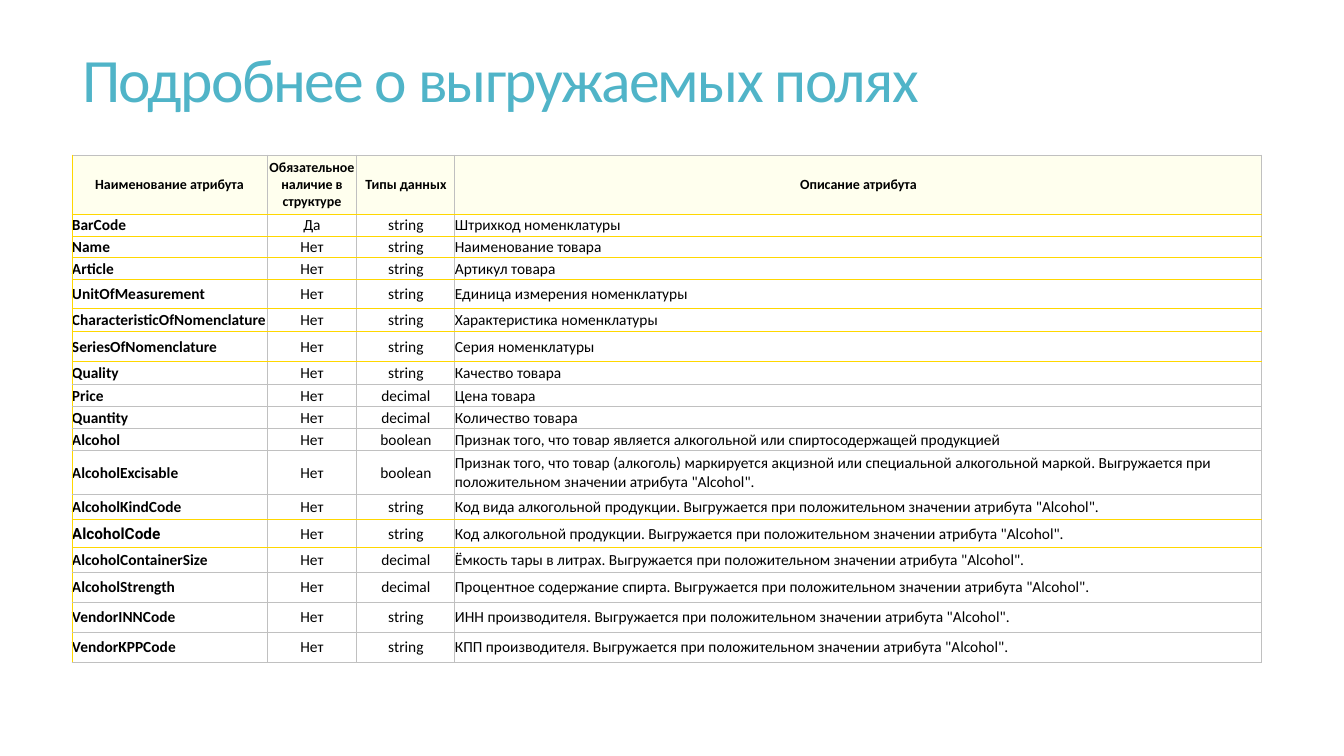
from lxml.etree import SubElement
from pptx import Presentation
from pptx.dml.color import RGBColor
from pptx.enum.text import MSO_ANCHOR, MSO_AUTO_SIZE, PP_ALIGN
from pptx.oxml.ns import qn
from pptx.util import Pt

SCALE = 914400 / 100.8  # EMU in one px
GOLD, GREY = "FFD700", "C0C0C0"


def px(n):
    return round(n * SCALE)


def paint(target, tint):
    if hasattr(target, "solid"):
        target.solid()
        target = target.fore_color
    target.rgb = RGBColor.from_string(tint)


deck = Presentation()
deck.slide_width, deck.slide_height = px(1344), px(756)
slide = deck.slides.add_slide(deck.slide_layouts[5])

# Title
title = slide.shapes.title
place = {"left": px(72), "top": px(21), "width": px(1190), "height": px(125)}
for key, value in place.items():
    setattr(title, key, value)
frame = title.text_frame
look = {"auto_size": MSO_AUTO_SIZE.NONE, "word_wrap": True,
        "vertical_anchor": MSO_ANCHOR.MIDDLE}
for key, value in look.items():
    setattr(frame, key, value)
para = frame.paragraphs[0]
para.alignment, para.line_spacing = PP_ALIGN.LEFT, 0.85
run = para.add_run()
run.text = "Подробнее о выгружаемых полях"
run.font.name, run.font.size = "Calibri", Pt(44)
paint(run.font.color, "50B4C8")
run.font._element.set("spc", "-120")

# Field data: row height in px, name, required, type, note
when = 'Выгружается при положительном значении атрибута "Alcohol".'
yes, no = "Да", "Нет"
rows = [
    (59, "Наименование атрибута", "Обязательное наличие в структуре",
     "Типы данных", "Описание атрибута"),
    (22, "BarCode", yes, "string", "Штрихкод номенклатуры"),
    (22, "Name", no, "string", "Наименование товара"),
    (22, "Article", no, "string", "Артикул товара"),
    (29, "UnitOfMeasurement", no, "string", "Единица измерения номенклатуры"),
    (23, "CharacteristicOfNomenclature", no, "string", "Характеристика номенклатуры"),
    (30, "SeriesOfNomenclature", no, "string", "Серия номенклатуры"),
    (23, "Quality", no, "string", "Качество товара"),
    (22, "Price", no, "decimal", "Цена товара"),
    (22, "Quantity", no, "decimal", "Количество товара"),
    (22, "Alcohol", no, "boolean",
     "Признак того, что товар является алкогольной или спиртосодержащей продукцией"),
    (44, "AlcoholExcisable", no, "boolean",
     f"Признак того, что товар (алкоголь) маркируется акцизной или специальной алкогольной маркой. {when}"),
    (25, "AlcoholKindCode", no, "string", f"Код вида алкогольной продукции. {when}"),
    (28, "AlcoholCode", no, "string", f"Код алкогольной продукции. {when}"),
    (25, "AlcoholContainerSize", no, "decimal", f"Ёмкость тары в литрах. {when}"),
    (30, "AlcoholStrength", no, "decimal", f"Процентное содержание спирта. {when}"),
    (30, "VendorINNCode", no, "string", f"ИНН производителя. {when}"),
    (30, "VendorKPPCode", no, "string", f"КПП производителя. {when}"),
]
wide = [195, 90, 98, 807]
gold_rules = {1, 2, 3, 4, 5, 6, 7, 13, 14}  # rules counted from the top edge

# Table
grid = slide.shapes.add_table(len(rows), len(wide), px(72), px(155),
                              px(sum(wide)), px(sum(row[0] for row in rows))).table
grid.first_row = grid.horz_banding = False
for col, size in zip(grid.columns, wide):
    col.width = px(size)

inset = {"margin_left": 0, "margin_right": 0, "margin_top": 0,
         "margin_bottom": 0, "vertical_anchor": MSO_ANCHOR.MIDDLE}
for r, (high, *texts) in enumerate(rows):
    grid.rows[r].height = px(high)
    for c, text in enumerate(texts):
        cell = grid.cell(r, c)
        for key, value in inset.items():
            setattr(cell, key, value)

        # Borders
        edges = {"lnL": c == 0, "lnR": False,
                 "lnT": r in gold_rules, "lnB": r + 1 in gold_rules}
        props = cell._tc.get_or_add_tcPr()
        for tag, gold in edges.items():
            line = SubElement(props, qn(f"a:{tag}"), w=str(Pt(0.75)))
            fill = SubElement(line, qn("a:solidFill"))
            SubElement(fill, qn("a:srgbClr"), val=GOLD if gold else GREY)

        # Fill
        if r == 0:
            paint(cell.fill, "FFFFEE")
        else:
            cell.fill.background()

        # Text
        para = cell.text_frame.paragraphs[0]
        para.alignment = PP_ALIGN.CENTER if r == 0 or c in (1, 2) else PP_ALIGN.LEFT
        run = para.add_run()
        run.text = text
        style = {"name": "Roboto" if text == "AlcoholCode" else "Calibri",
                 "size": Pt(10 if r == 0 else 11), "bold": r == 0 or c == 0}
        for key, value in style.items():
            setattr(run.font, key, value)
        paint(run.font.color, "000000")

deck.save("out.pptx")
